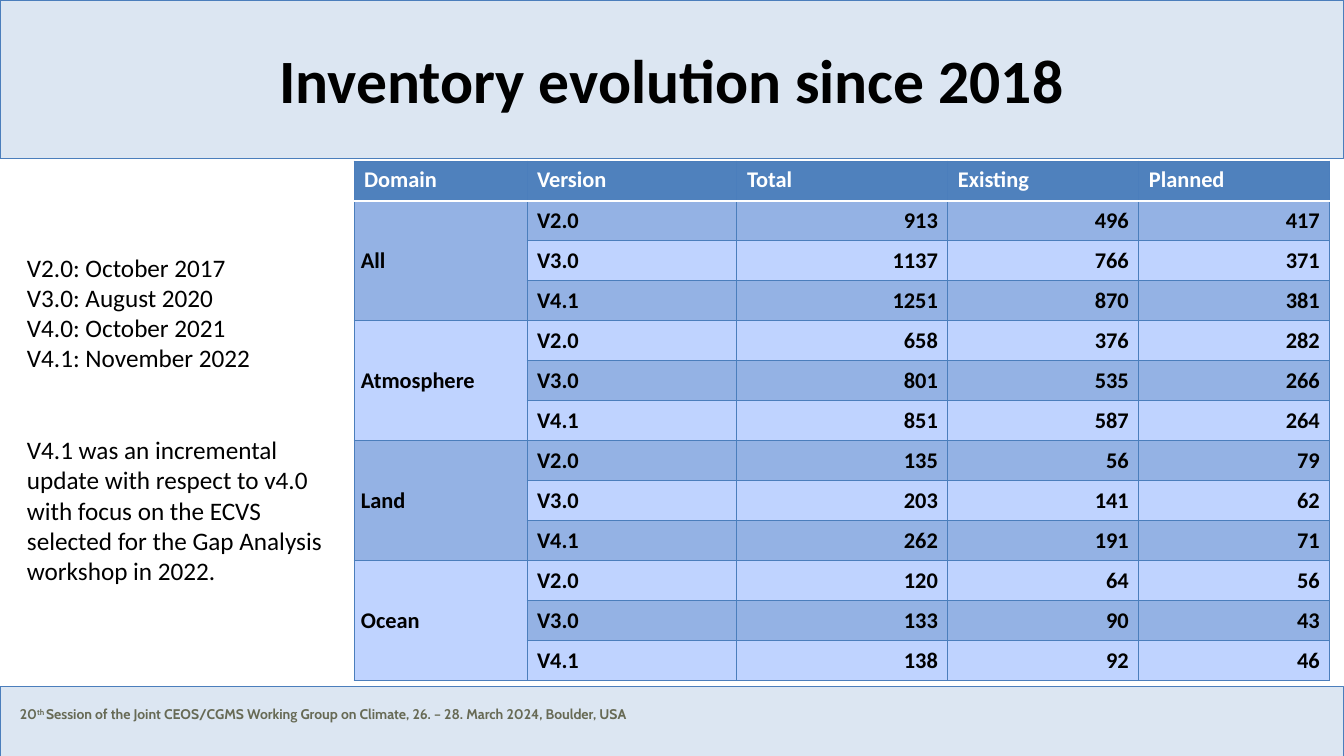
"""Build the slide on inventory evolution since 2018."""
from lxml.etree import SubElement
from pptx import Presentation
from pptx.dml.color import RGBColor
from pptx.enum.shapes import MSO_SHAPE
from pptx.enum.text import MSO_ANCHOR, PP_ALIGN
from pptx.oxml.ns import qn
from pptx.util import Pt

PX = 914400 / 100.8
BLACK = RGBColor(0x00, 0x00, 0x00)
WHITE = RGBColor(0xFF, 0xFF, 0xFF)
OLIVE = RGBColor(0x67, 0x6A, 0x55)
BAND_FILL = RGBColor(0xDC, 0xE6, 0xF2)
BORDER = RGBColor(0x4B, 0x7E, 0xBC)
HEADER_FILL = RGBColor(0x4F, 0x81, 0xBD)
DARK_ROW = RGBColor(0x94, 0xB2, 0xE4)
LIGHT_ROW = RGBColor(0xBF, 0xD3, 0xFF)


def px(*lengths):
    return [round(length * PX) for length in lengths]


def write(para, text, size=16, color=BLACK, bold=False, font="Calibri",
          align=PP_ALIGN.LEFT, baseline=None):
    para.alignment = align
    span = para.add_run()
    span.text = text
    span.font.size = Pt(size)
    span.font.bold = bold
    span.font.name = font
    span.font.color.rgb = color
    if baseline:
        span.font._element.set("baseline", str(baseline))


deck = Presentation()
deck.slide_width, deck.slide_height = px(1344, 756)
page = deck.slides.add_slide(deck.slide_layouts[6])

for top, height in ((687, 72), (0, 159)):
    band = page.shapes.add_shape(MSO_SHAPE.RECTANGLE, *px(0, top, 1344, height))
    band.shadow.inherit = False
    band.fill.solid()
    band.fill.fore_color.rgb = BAND_FILL
    band.line.color.rgb = BORDER
    band.line.width = Pt(0.75)

footer = page.shapes.add_textbox(*px(10, 701, 1073, 27)).text_frame
footer.word_wrap = True
session = "Session of the Joint CEOS/CGMS Working Group on Climate, 26. – 28. March 2024, Boulder, USA"
for text, baseline in (("20", None), ("th ", 30000), (session, None)):
    write(footer.paragraphs[0], text, size=10, color=OLIVE, bold=True,
          font="Cabin", baseline=baseline)

title = page.shapes.add_textbox(*px(213, 16, 918, 126)).text_frame
title.word_wrap = True
title.vertical_anchor = MSO_ANCHOR.MIDDLE
write(title.paragraphs[0], "Inventory evolution since 2018", size=44, bold=True,
      align=PP_ALIGN.CENTER)

headings = ["Domain", "Version", "Total", "Existing", "Planned"]
versions = ["V2.0", "V3.0", "V4.1"]
inventory = {
    "All": [(913, 496, 417), (1137, 766, 371), (1251, 870, 381)],
    "Atmosphere": [(658, 376, 282), (801, 535, 266), (851, 587, 264)],
    "Land": [(135, 56, 79), (203, 141, 62), (262, 191, 71)],
    "Ocean": [(120, 64, 56), (133, 90, 43), (138, 92, 46)],
}
rows = [headings]
for domain, records in inventory.items():
    for version, counts in zip(versions, records):
        rows.append([domain if version == versions[0] else "", version, *map(str, counts)])

table = page.shapes.add_table(len(rows), len(headings), *px(354, 161, 976, 520)).table
table.horz_banding = False
for column, width in zip(table.columns, px(173, 210, 211, 191, 191)):
    column.width = width
for row in table.rows:
    row.height = px(40)[0]

for row_index, values in enumerate(rows):
    for column_index, value in enumerate(values):
        cell = table.cell(row_index, column_index)
        is_header = row_index == 0
        is_domain = column_index == 0 and not is_header
        properties = cell._tc.get_or_add_tcPr()
        for side in ("lnL", "lnR", "lnT", "lnB"):
            under_header = (row_index, side) in ((0, "lnB"), (1, "lnT"))
            line = SubElement(properties, qn(f"a:{side}"), w=str(Pt(2 if under_header else 0.75)))
            paint = SubElement(line, qn("a:solidFill"))
            SubElement(paint, qn("a:srgbClr"), val=str(WHITE if under_header else BORDER))
        shade_row = (row_index - 1) // 3 * 3 + 1 if is_domain else row_index
        cell.fill.solid()
        cell.fill.fore_color.rgb = HEADER_FILL if is_header else DARK_ROW if shade_row % 2 else LIGHT_ROW
        if not is_header:
            cell.vertical_anchor = MSO_ANCHOR.MIDDLE
        if is_domain:
            cell.margin_left, cell.margin_top, cell.margin_right, cell.margin_bottom = px(7, 0, 7, 0)
        if value:
            is_count = column_index > 1 and not is_header
            write(cell.text_frame.paragraphs[0], value, bold=True,
                  color=WHITE if is_header else BLACK,
                  align=PP_ALIGN.RIGHT if is_count else PP_ALIGN.LEFT)

for first_row in range(1, len(rows), len(versions)):
    table.cell(first_row, 0).merge(table.cell(first_row + len(versions) - 1, 0))

notes = page.shapes.add_textbox(*px(17, 247, 325, 377)).text_frame
notes.word_wrap = True
releases = ["V2.0: October 2017", "V3.0: August 2020", "V4.0: October 2021", "V4.1: November 2022"]
remark = ("V4.1 was an incremental update with respect to v4.0 with focus on the ECVS "
          "selected for the Gap Analysis workshop in 2022.")
for index, text in enumerate([*releases, remark]):
    para = notes.paragraphs[0] if index == 0 else notes.add_paragraph()
    write(para, text, size=18)
para.space_before = Pt(44)

deck.save("out.pptx")
